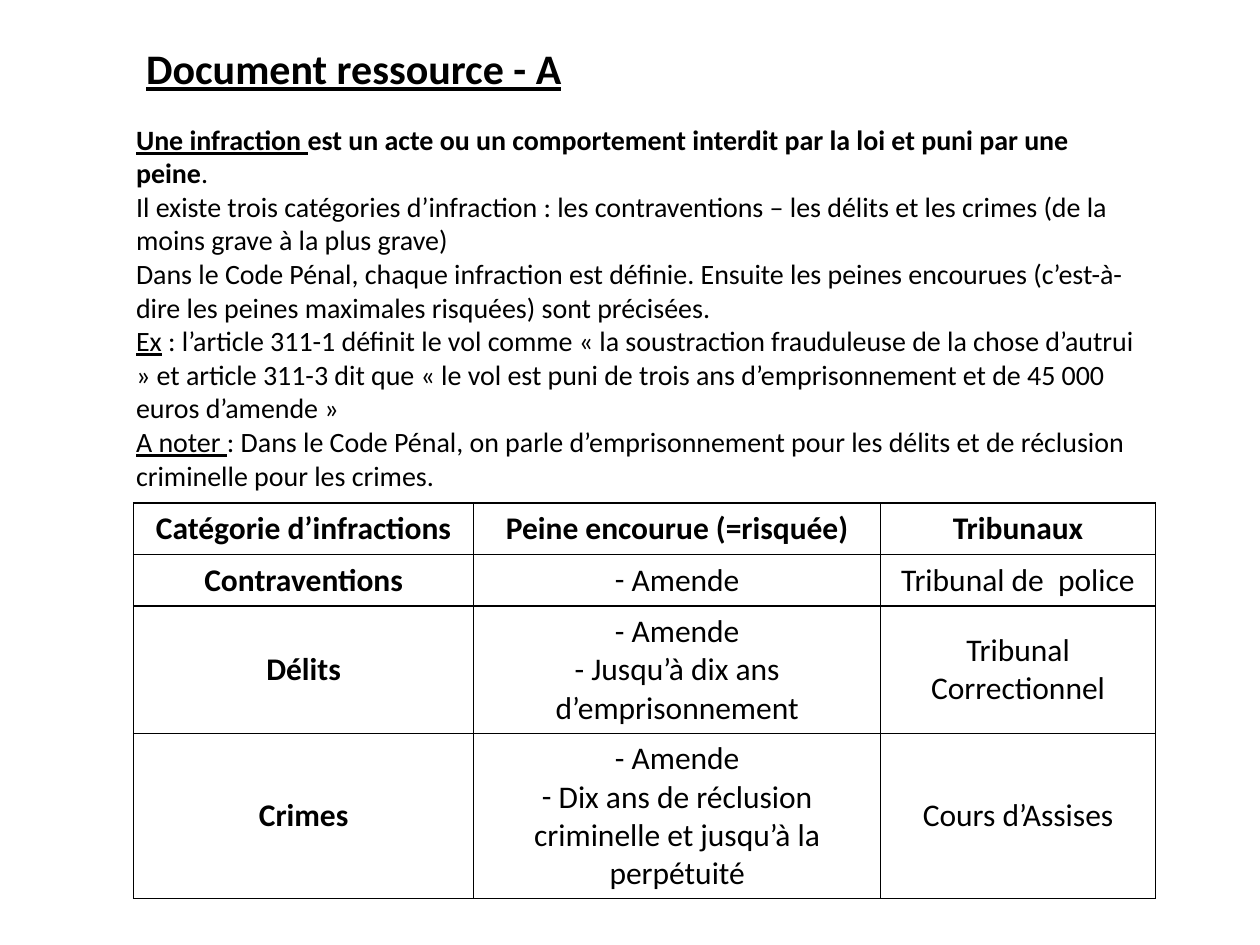
from lxml.etree import SubElement
from pptx import Presentation
from pptx.dml.color import RGBColor
from pptx.enum.text import MSO_ANCHOR, MSO_AUTO_SIZE, PP_ALIGN
from pptx.oxml.ns import qn
from pptx.util import Inches, Pt

BLACK = RGBColor(0x00, 0x00, 0x00)
FONT = "Calibri"
COLUMN_WIDTHS = (2.7, 3.23, 2.18)
ROW_HEIGHT = 0.41
DEFINITIONS = [
    [("Une infraction ", {"bold": True, "underline": True}),
     ("est un acte ou un comportement interdit par la loi et puni par une peine", {"bold": True}),
     (".", {})],
    [("Il existe trois catégories d’infraction : les contraventions – les délits et les crimes "
      "(de la moins grave à la plus grave)", {})],
    [("Dans le Code Pénal, chaque infraction est définie. Ensuite les peines encourues "
      "(c’est-à-dire les peines maximales risquées) sont précisées.", {})],
    [("Ex", {"underline": True}),
     (" : l’article 311-1 définit le vol comme « la soustraction frauduleuse de la chose "
      "d’autrui » et article 311-3 dit que « le vol est puni de trois ans d’emprisonnement "
      "et de 45 000 euros d’amende »", {})],
    [("A noter ", {"underline": True}),
     (": Dans le Code Pénal, on parle d’emprisonnement pour les délits et de réclusion "
      "criminelle pour les crimes.", {})],
]
HEADINGS = ("Catégorie d’infractions", "Peine encourue (=risquée)", "Tribunaux")
OFFENCES = [
    ("Contraventions", [" Amende"], "Tribunal de  police"),
    ("Délits", [" Amende", " Jusqu’à dix ans d’emprisonnement"], "Tribunal Correctionnel"),
    ("Crimes", [" Amende", " Dix ans de réclusion criminelle et jusqu’à la perpétuité"],
     "Cours d’Assises"),
]


def add_run(paragraph, text, size=18, bold=False, underline=False):
    """Append formatted text to a paragraph."""
    run = paragraph.add_run()
    run.text = text
    font = run.font
    font.name, font.size, font.bold, font.underline = FONT, Pt(size), bold, underline
    font.color.rgb = BLACK


def set_bullet(paragraph, character=None):
    """Give a paragraph a bullet character, or none, without indentation."""
    properties = paragraph._p.get_or_add_pPr()
    properties.set("marL", "0")
    properties.set("indent", "0")
    if character:
        SubElement(properties, qn("a:buFont"), typeface=FONT)
        SubElement(properties, qn("a:buChar"), char=character)
    else:
        SubElement(properties, qn("a:buNone"))


def fill_placeholder(shape, box, paragraphs, size):
    """Place a placeholder and write its paragraphs of formatted runs."""
    shape.left, shape.top, shape.width, shape.height = map(Inches, box)
    frame = shape.text_frame
    frame.word_wrap = True
    frame.auto_size = MSO_AUTO_SIZE.SHAPE_TO_FIT_TEXT
    frame.vertical_anchor = MSO_ANCHOR.TOP
    for index, runs in enumerate(paragraphs):
        paragraph = frame.add_paragraph() if index else frame.paragraphs[0]
        paragraph.alignment = PP_ALIGN.LEFT
        paragraph.space_before = Pt(0)
        set_bullet(paragraph)
        for text, style in runs:
            add_run(paragraph, text, size=size, **style)


def set_borders(cell):
    """Draw a thin black line on every side of a cell."""
    properties = cell._tc.get_or_add_tcPr()
    for position, side in enumerate(("lnL", "lnR", "lnT", "lnB")):
        line = properties.makeelement(qn(f"a:{side}"), {"w": str(Pt(1))})
        properties.insert(position, line)
        SubElement(SubElement(line, qn("a:solidFill")), qn("a:srgbClr"), val=str(BLACK))


def fill_cell(cell, lines, bold=False, bullet=None, anchor=MSO_ANCHOR.MIDDLE):
    """Write centred lines in an unfilled, bordered cell."""
    cell.fill.background()
    cell.vertical_anchor = anchor
    set_borders(cell)
    for index, line in enumerate(lines):
        paragraph = cell.text_frame.add_paragraph() if index else cell.text_frame.paragraphs[0]
        paragraph.alignment = PP_ALIGN.CENTER
        if bullet:
            set_bullet(paragraph, bullet)
        add_run(paragraph, line, bold=bold)


def add_offence_table(slide):
    """Add the table of offences, penalties and courts."""
    row_count = len(OFFENCES) + 1
    table = slide.shapes.add_table(
        row_count, len(HEADINGS), Inches(1.06), Inches(3.99),
        Inches(sum(COLUMN_WIDTHS)), Inches(ROW_HEIGHT * row_count)).table
    for column, width in zip(table.columns, COLUMN_WIDTHS):
        column.width = Inches(width)
    for row, lines in zip(table.rows, (1, 1, 3, 4)):
        row.height = Inches(ROW_HEIGHT + 0.3 * (lines - 1))
    for column, heading in enumerate(HEADINGS):
        fill_cell(table.cell(0, column), [heading], bold=True, anchor=MSO_ANCHOR.TOP)
    for row, (category, penalties, court) in enumerate(OFFENCES, start=1):
        fill_cell(table.cell(row, 0), [category], bold=True)
        fill_cell(table.cell(row, 1), penalties, bullet="-")
        fill_cell(table.cell(row, 2), [court])


def main():
    """Build and save the slide."""
    presentation = Presentation()
    presentation.slide_width, presentation.slide_height = Inches(10), Inches(7.5)
    slide = presentation.slides.add_slide(presentation.slide_layouts[1])
    title, body = slide.placeholders
    heading = [[("Document ressource - A", {"bold": True, "underline": True})]]
    fill_placeholder(title, (1.06, 0.29, 7.56, 0.5), heading, size=24)
    fill_placeholder(body, (0.98, 0.92, 8.19, 3.06), DEFINITIONS, size=16)
    add_offence_table(slide)
    presentation.save("out.pptx")


if __name__ == "__main__":
    main()
